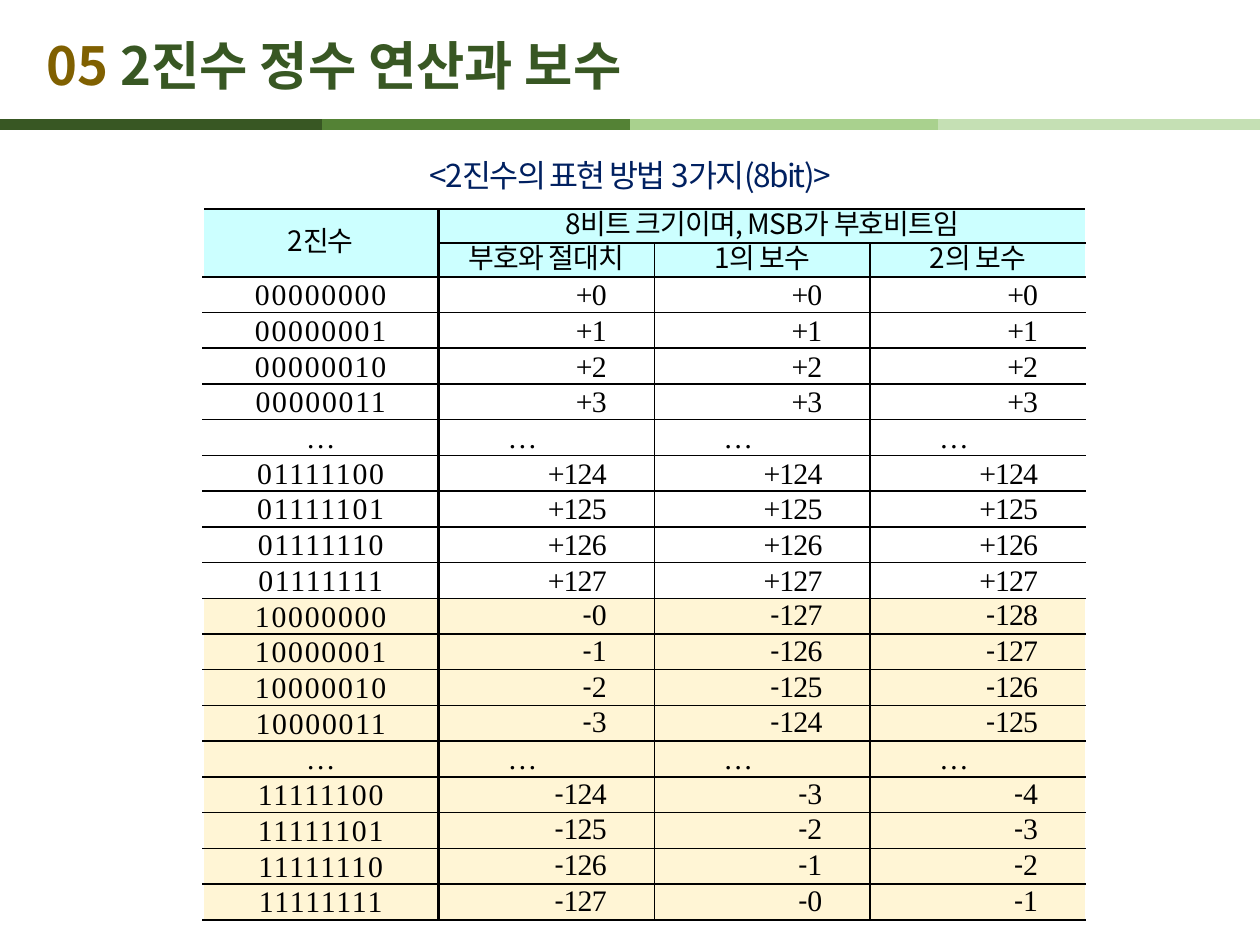
from lxml.etree import SubElement
from pptx import Presentation
from pptx.dml.color import RGBColor
from pptx.enum.shapes import MSO_CONNECTOR
from pptx.enum.text import MSO_ANCHOR, PP_ALIGN
from pptx.oxml import parse_xml
from pptx.oxml.ns import nsdecls, qn
from pptx.util import Cm, Pt

KOREAN = "Noto Sans CJK KR"
SERIF = "Times New Roman"
ELLIPSIS = "…"
BLACK, WHITE = "000000", "FFFFFF"
HEADER_FILL, NEGATIVE_FILL = "CCFFFF", "FFF5D5"


def rgb(value):
    return RGBColor.from_string(value)


def set_font(font, name, size=None, color=None, spacing=0, bold=None):
    """Style a font; spacing is the extra space between letters in points."""
    font.name = name
    if size:
        font.size = Pt(size)
    if color:
        font.color.rgb = rgb(color)
    if bold is not None:
        font.bold = bold
    properties = font._element
    properties.set("spc", str(int(spacing * 100)))
    east_asian = parse_xml(f'<a:ea {nsdecls("a")} typeface="{name}"/>')
    properties.find(qn("a:latin")).addnext(east_asian)


def add_text_box(slide, left, top, width, height):
    frame = slide.shapes.add_textbox(Cm(left), Cm(top), Cm(width), Cm(height)).text_frame
    frame.word_wrap = True
    frame.vertical_anchor = MSO_ANCHOR.MIDDLE
    return frame.paragraphs[0]


def add_color_band(slide, top):
    """Four thick lines, each later one covering the end of the one before."""
    length = 6.5
    colors = ["385723", "548235", "A9D18E", "C5E0B4"]
    for start, color in zip([0, 6.5, 12.7, 18.9], colors):
        line = slide.shapes.add_connector(
            MSO_CONNECTOR.STRAIGHT, Cm(start), Cm(top), Cm(start + length), Cm(top))
        line.line.color.rgb = rgb(color)
        line.line.width = Pt(6)
        SubElement(line._element.spPr, qn("a:effectLst"))


def add_title(slide, left, top, width, height):
    paragraph = add_text_box(slide, left, top, width, height)
    for text, color in [("05 ", "806000"), ("2진수 정수 연산과 보수", "385723")]:
        run = paragraph.add_run()
        run.text = text
        set_font(run.font, KOREAN, 30, color, bold=True)


def add_caption(slide, left, top, width, height):
    paragraph = add_text_box(slide, left, top, width, height)
    paragraph.text = "<2진수의 표현 방법 3가지(8bit)>"
    paragraph.alignment = PP_ALIGN.CENTER
    set_font(paragraph.font, KOREAN, 18, "002060", -1)


def table_rows():
    """Bit patterns with their sign-magnitude, 1's and 2's complement values."""
    rows = []
    for first in (0, 124, 128, 252):
        for number in range(first, first + 4):
            if number < 128:
                values = [f"+{number}"] * 3
            else:
                values = [f"-{size}" for size in (number - 128, 255 - number, 256 - number)]
            rows.append([f"{number:08b}"] + values)
        if first in (0, 128):
            rows.append([ELLIPSIS] * 4)
    return rows


def set_borders(cell, left, right, top, bottom):
    """Each side is a (colour, points) pair; borders come before the fill."""
    sides = zip(("lnL", "lnR", "lnT", "lnB"), (left, right, top, bottom))
    properties = cell._tc.get_or_add_tcPr()
    for index, (tag, (color, points)) in enumerate(sides):
        properties.insert(index, parse_xml(
            f'<a:{tag} {nsdecls("a")} w="{Pt(points)}"><a:solidFill>'
            f'<a:srgbClr val="{color}"/></a:solidFill></a:{tag}>'))


def fill_header_cell(cell, text):
    paragraph = cell.text_frame.paragraphs[0]
    paragraph.text = text
    paragraph.alignment = PP_ALIGN.CENTER
    paragraph.line_spacing = Pt(19)
    set_font(paragraph.font, KOREAN, 16, BLACK, -0.5)


def fill_data_cell(cell, text, is_pattern):
    paragraph = cell.text_frame.paragraphs[0]
    paragraph.line_spacing = Pt(20)
    centered = is_pattern or text == ELLIPSIS
    paragraph.alignment = PP_ALIGN.CENTER if centered else PP_ALIGN.RIGHT
    if not is_pattern:
        cell.margin_right = Cm(0.96)
    set_font(paragraph.font, SERIF, 17, BLACK, 1 if is_pattern else -0.5)
    if text.startswith("-"):
        sign = paragraph.add_run()
        sign.text = "-"
        set_font(sign.font, "Calibri")
        text = text[1:]
    paragraph.add_run().text = text


def add_number_table(slide, left, top):
    data = table_rows()
    header_rows = 2
    row_heights = [0.68] * header_rows + [0.72] * len(data)
    column_widths = [4.75] + [4.35] * 3
    last_row, last_column = len(row_heights) - 1, len(column_widths) - 1
    table = slide.shapes.add_table(
        len(row_heights), len(column_widths), Cm(left), Cm(top),
        Cm(sum(column_widths)), Cm(sum(row_heights))).table
    table.first_row = table.horz_banding = False
    for row, height in zip(table.rows, row_heights):
        row.height = Cm(height)
    for column, width in zip(table.columns, column_widths):
        column.width = Cm(width)

    # Header
    table.cell(0, 0).merge(table.cell(1, 0))
    table.cell(0, 1).merge(table.cell(0, last_column))
    headers = {(0, 0): "2진수", (0, 1): "8비트 크기이며, MSB가 부호비트임",
               (1, 1): "부호와 절대치", (1, 2): "1의 보수", (1, 3): "2의 보수"}

    # Cells
    thin, thick, outside = (BLACK, 1), (BLACK, 1.5), (WHITE, 1)
    thick_rows = (0, header_rows, last_row + 1)
    first_negative = header_rows + len(data) // 2
    for row in range(last_row + 1):
        for column in range(last_column + 1):
            cell = table.cell(row, column)
            if cell.is_spanned:
                continue
            cell.margin_left = cell.margin_right = cell.margin_top = cell.margin_bottom = 0
            cell.vertical_anchor = MSO_ANCHOR.MIDDLE
            if row < header_rows:
                fill_header_cell(cell, headers[row, column])
            else:
                fill_data_cell(cell, data[row - header_rows][column], column == 0)
            if header_rows <= row < first_negative:
                cell.fill.background()
            else:
                cell.fill.solid()
                cell.fill.fore_color.rgb = rgb(
                    HEADER_FILL if row < header_rows else NEGATIVE_FILL)
            below, beyond = row + cell.span_height, column + cell.span_width
            vertical = {0: outside, 1: thick, last_column + 1: outside}
            set_borders(cell, vertical.get(column, thin), vertical.get(beyond, thin),
                        thick if row in thick_rows else thin,
                        thick if below in thick_rows else thin)


def main():
    presentation = Presentation()
    presentation.slide_width, presentation.slide_height = Cm(25.4), Cm(19.05)
    slide = presentation.slides.add_slide(presentation.slide_layouts[6])
    add_color_band(slide, 2.51)
    add_title(slide, 0.69, 0.53, 21, 1.52)
    add_caption(slide, 7.7, 3.02, 10, 1.02)
    add_number_table(slide, 4.09, 4.22)
    presentation.save("out.pptx")


if __name__ == "__main__":
    main()
